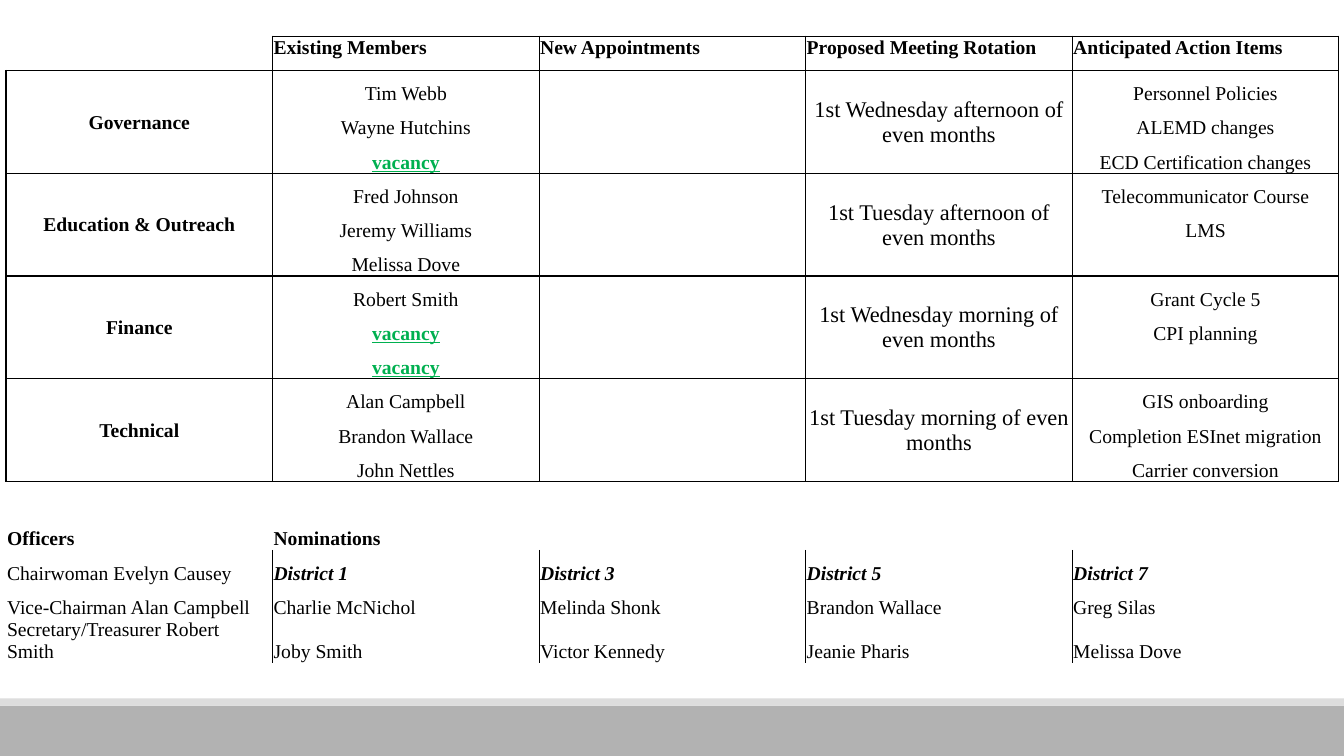
from dataclasses import dataclass, field

from lxml.etree import SubElement
from pptx import Presentation
from pptx.dml.color import RGBColor
from pptx.enum.shapes import MSO_SHAPE
from pptx.enum.text import MSO_ANCHOR as ANCHOR, PP_ALIGN as ALIGN
from pptx.oxml.ns import qn
from pptx.slide import Slide
from pptx.table import Table, _Cell as Cell
from pptx.util import Inches, Pt

COLORS = {"text": "000000", "vacancy": "00B050", "bar": "B2B2B2", "strip": "DDDDDD"}
FONT = "Times New Roman"
NO_STYLE = "{2D5ABB26-0587-4C30-8999-92F81FD0307C}"
ROWS, COLS, ROW_HEIGHT = 18, 5, 0.34
MEMBER_ROWS = 3
SPACER_ROW = 13
MARGINS = {"margin_left": Inches(0.01), "margin_right": Inches(0.01),
           "margin_top": Inches(0.01), "margin_bottom": 0}


@dataclass
class Bar:
    top: float
    height: float
    color: str


@dataclass
class Committee:
    name: str
    members: list[str]
    rotation: str
    actions: list[str]


@dataclass
class Format:
    size: int = 14
    color: str = "text"
    align: ALIGN = ALIGN.LEFT
    anchor: ANCHOR = ANCHOR.BOTTOM
    font: dict[str, bool] = field(default_factory=dict)


BOLD = {"bold": True}
HEADER = Format(anchor=ANCHOR.TOP, font=BOLD)
COMMITTEE = Format(align=ALIGN.CENTER, anchor=ANCHOR.MIDDLE, font=BOLD)
ROTATION = Format(16, align=ALIGN.CENTER, anchor=ANCHOR.MIDDLE)
ENTRY = Format(align=ALIGN.CENTER)
VACANCY = Format(color="vacancy", align=ALIGN.CENTER, font={"bold": True, "underline": True})
SECTION = Format(font=BOLD)
DISTRICT = Format(font={"bold": True, "italic": True})
PERSON = Format()

BARS = [Bar(7, 0.5, "bar"), Bar(6.93, 0.07, "strip")]
HEADINGS = ["Existing Members", "New Appointments", "Proposed Meeting Rotation",
            "Anticipated Action Items"]
COMMITTEES = [
    Committee("Governance", ["Tim Webb", "Wayne Hutchins", "vacancy"],
              "1st Wednesday afternoon of even months",
              ["Personnel Policies", "ALEMD changes", "ECD Certification changes"]),
    Committee("Education & Outreach", ["Fred Johnson", "Jeremy Williams", "Melissa Dove"],
              "1st Tuesday afternoon of even months",
              ["Telecommunicator Course", "LMS"]),
    Committee("Finance", ["Robert Smith", "vacancy", "vacancy"],
              "1st Wednesday morning of even months",
              ["Grant Cycle 5", "CPI planning"]),
    Committee("Technical", ["Alan Campbell", "Brandon Wallace", "John Nettles"],
              "1st Tuesday morning of even months",
              ["GIS onboarding", "Completion ESInet migration", "Carrier conversion"]),
]
OFFICER_ROWS = [
    ["Officers", "Nominations"],
    ["Chairwoman Evelyn Causey", "District 1", "District 3", "District 5", "District 7"],
    ["Vice-Chairman Alan Campbell", "Charlie McNichol", "Melinda Shonk",
     "Brandon Wallace", "Greg Silas"],
    ["Secretary/Treasurer Robert Smith", "Joby Smith", "Victor Kennedy",
     "Jeanie Pharis", "Melissa Dove"],
]


def add_bar(s: Slide, bar: Bar) -> None:
    """Draw one full-width footer bar."""
    sp = s.shapes.add_shape(MSO_SHAPE.RECTANGLE, 0, Inches(bar.top),
                            Inches(13.33), Inches(bar.height))
    sp.shadow.inherit = False
    sp.fill.solid()
    sp.fill.fore_color.rgb = RGBColor.from_string(COLORS[bar.color])
    sp.line.fill.background()


def edges(row: int, col: int) -> tuple[str, float]:
    """Return the ruled sides of a cell and their width in points."""
    if row == 0:
        return ("LRTB" if col else "RB"), 1
    if row < SPACER_ROW:
        merged = col in (0, 3)
        top = "T" if row % MEMBER_ROWS == 1 else ""
        bottom = "B" if merged or row % MEMBER_ROWS == 0 else ""
        return "LR" + top + bottom, 1
    if row == SPACER_ROW:
        return "T", 1
    if row == SPACER_ROW + 1:
        return "", 0
    return ("L" if col else "") + ("R" if col < COLS - 1 else ""), 0.5


def style_cell(cell: Cell, sides: str, width: float) -> None:
    """Set the margins, borders and clear fill of a cell."""
    for name, value in MARGINS.items():
        setattr(cell, name, value)
    tc_pr = cell._tc.get_or_add_tcPr()
    for side in "LRTB":
        if side in sides:
            ln = SubElement(tc_pr, qn(f"a:ln{side}"), w=str(Pt(width)))
            fill = SubElement(ln, qn("a:solidFill"))
            SubElement(fill, qn("a:srgbClr"), val=COLORS["text"])
        else:
            ln = SubElement(tc_pr, qn(f"a:ln{side}"), w="0")
            SubElement(ln, qn("a:noFill"))
    cell.fill.background()


def write(cell: Cell, text: str, fmt: Format) -> None:
    """Write formatted text into a cell."""
    cell.vertical_anchor = fmt.anchor
    p = cell.text_frame.paragraphs[0]
    p.alignment = fmt.align
    r = p.add_run()
    r.text = text
    r.font.color.rgb = RGBColor.from_string(COLORS[fmt.color])
    values = {"name": FONT, "size": Pt(fmt.size), "bold": False} | fmt.font
    for name, value in values.items():
        setattr(r.font, name, value)


def add_committee(table: Table, row: int, committee: Committee) -> None:
    """Fill the three rows of one committee."""
    for col, text, fmt in ((0, committee.name, COMMITTEE), (3, committee.rotation, ROTATION)):
        table.cell(row, col).merge(table.cell(row + MEMBER_ROWS - 1, col))
        write(table.cell(row, col), text, fmt)
    for col, entries in ((1, committee.members), (4, committee.actions)):
        for i, text in enumerate(entries):
            write(table.cell(row + i, col), text, VACANCY if text == "vacancy" else ENTRY)


def add_officers(table: Table) -> None:
    """Fill the officers and nominations rows."""
    for i, texts in enumerate(OFFICER_ROWS):
        for col, text in enumerate(texts):
            fmt = SECTION if i == 0 else DISTRICT if i == 1 and col else PERSON
            write(table.cell(SPACER_ROW + 1 + i, col), text, fmt)


def add_roster(s: Slide) -> None:
    """Build the committee and officer table."""
    frame = s.shapes.add_table(ROWS, COLS, Inches(0.06), Inches(0.36),
                               Inches(13.22), Inches(ROWS * ROW_HEIGHT))
    table = frame.table
    table._tbl.tblPr.find(qn("a:tableStyleId")).text = NO_STYLE
    table.first_row = table.horz_banding = False
    for row in range(ROWS):
        for col in range(COLS):
            style_cell(table.cell(row, col), *edges(row, col))
    for col, text in enumerate(HEADINGS, 1):
        write(table.cell(0, col), text, HEADER)
    for i, committee in enumerate(COMMITTEES):
        add_committee(table, 1 + i * MEMBER_ROWS, committee)
    add_officers(table)


def main() -> None:
    """Build and save the slide."""
    prs = Presentation()
    prs.slide_width, prs.slide_height = Inches(13.33), Inches(7.5)
    s = prs.slides.add_slide(prs.slide_layouts[6])
    for bar in BARS:
        add_bar(s, bar)
    add_roster(s)
    prs.save("out.pptx")


if __name__ == "__main__":
    main()
